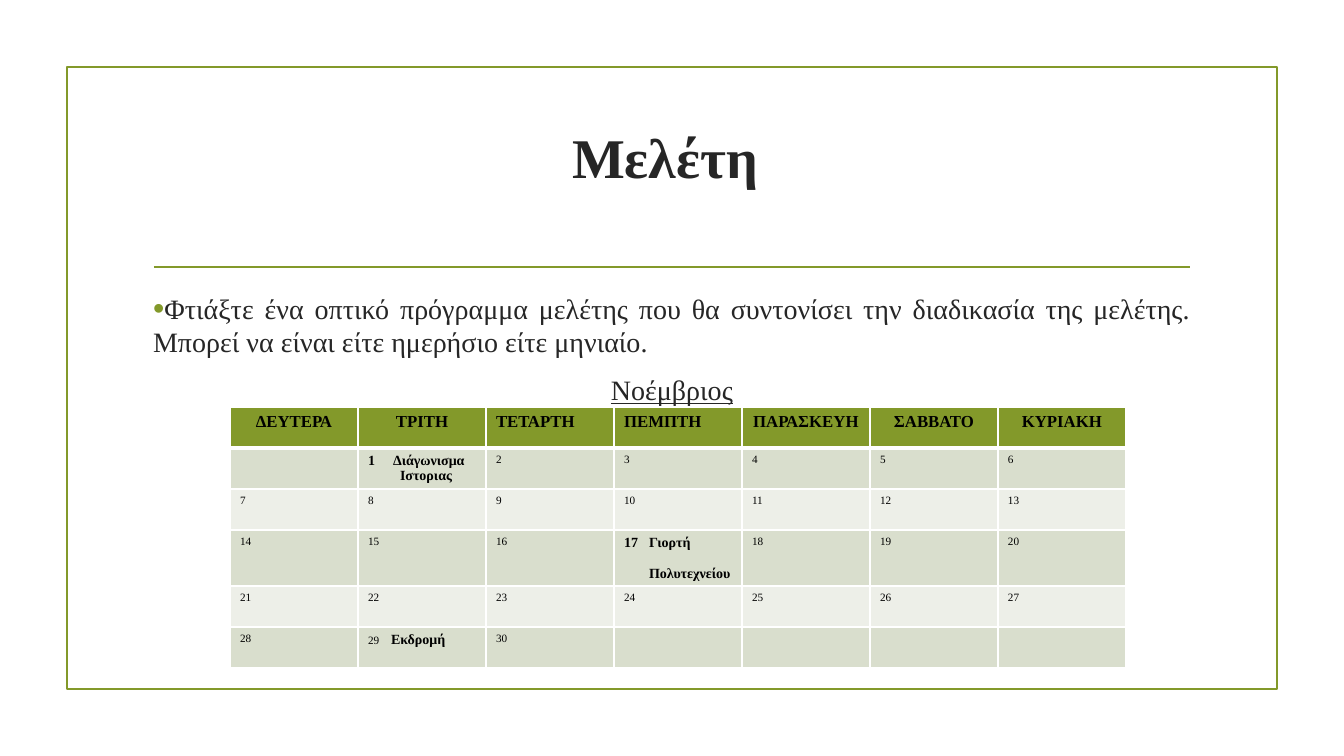
from lxml.etree import SubElement
from pptx import Presentation
from pptx.dml.color import RGBColor
from pptx.enum.shapes import MSO_CONNECTOR, MSO_SHAPE
from pptx.enum.text import MSO_ANCHOR, MSO_AUTO_SIZE, PP_ALIGN
from pptx.oxml.ns import qn
from pptx.util import Pt

EMU_PER_PX = 914400 / 100.8
FONT = "Times New Roman"
OLIVE = RGBColor(0x83, 0x99, 0x2A)
SAGE = RGBColor(0xD9, 0xDE, 0xCD)
MIST = RGBColor(0xED, 0xEF, 0xE8)
WHITE = RGBColor(0xFF, 0xFF, 0xFF)
CHARCOAL = RGBColor(0x26, 0x26, 0x26)
BLACK = RGBColor(0x00, 0x00, 0x00)

WEEKDAYS = ["ΔΕΥΤΕΡΑ", "ΤΡΙΤΗ", "ΤΕΤΑΡΤΗ", "ΠΕΜΠΤΗ", "ΠΑΡΑΣΚΕΥΗ", "ΣΑΒΒΑΤΟ", "ΚΥΡΙΑΚΗ"]
LEFT_ALIGNED_DAYS = {"ΤΕΤΑΡΤΗ", "ΠΕΜΠΤΗ"}
ROW_HEIGHTS = [41, 41, 41, 56, 41, 41]
LAST_DAY = 30
NUMBERED_EVENTS = {
    1: ("Διάγωνισμα", "Ιστοριας", 32, 0),
    17: ("Γιορτή", "Πολυτεχνείου", 25, 11),
}
TABBED_EVENTS = {29: "Εκδρομή"}


def px(length):
    return round(length * EMU_PER_PX)


class StudySlide:
    """Holds the style and the current slide, and adds each kind of element."""

    def __init__(self, presentation):
        self.slide = presentation.slides.add_slide(presentation.slide_layouts[1])

    def add_run(self, paragraph, text, size, color=CHARCOAL, bold=False, underline=False):
        run = paragraph.add_run()
        run.text = text
        font = run.font
        font.name, font.size, font.bold = FONT, Pt(size), bold
        font.underline = underline
        font.color.rgb = color

    def set_indent(self, paragraph, left, first=0):
        properties = paragraph._p.get_or_add_pPr()
        properties.set("marL", str(px(left)))
        properties.set("indent", str(px(first)))
        return properties

    def add_frame(self, left, top, width, height):
        shape = self.slide.shapes.add_shape(
            MSO_SHAPE.RECTANGLE, px(left), px(top), px(width), px(height))
        shape.shadow.inherit = False
        shape.fill.background()
        shape.line.color.rgb = OLIVE
        shape.line.width = Pt(1.25)

    def add_rule(self, left, right, y):
        connector = self.slide.shapes.add_connector(
            MSO_CONNECTOR.STRAIGHT, px(left), px(y), px(right), px(y))
        connector.line.color.rgb = OLIVE
        connector.line.width = Pt(1.25)
        SubElement(connector._element.spPr, qn("a:effectLst"))

    def place(self, placeholder, left, top, width, height, anchor):
        placeholder.left, placeholder.top = px(left), px(top)
        placeholder.width, placeholder.height = px(width), px(height)
        frame = placeholder.text_frame
        frame.word_wrap = True
        frame.auto_size = MSO_AUTO_SIZE.NONE
        frame.vertical_anchor = anchor
        return frame

    def add_title(self, text, *box):
        frame = self.place(self.slide.shapes.title, *box, MSO_ANCHOR.MIDDLE)
        paragraph = frame.paragraphs[0]
        paragraph.alignment = PP_ALIGN.CENTER
        self.add_run(paragraph, text, 40, bold=True)

    def add_body(self, advice, month, *box):
        frame = self.place(self.slide.placeholders[1], *box, MSO_ANCHOR.TOP)
        bullet_paragraph, month_paragraph = frame.paragraphs[0], frame.add_paragraph()
        for paragraph in (bullet_paragraph, month_paragraph):
            self.set_indent(paragraph, 0)
            paragraph.line_spacing = 1.0
            paragraph.space_after = Pt(6)
        bullet_paragraph.space_before = Pt(0)
        month_paragraph.space_before = Pt(4)
        properties = bullet_paragraph._p.pPr
        bullet_color = SubElement(properties, qn("a:buClr"))
        SubElement(bullet_color, qn("a:srgbClr"), val=str(OLIVE))
        SubElement(properties, qn("a:buSzPct"), val="115000")
        SubElement(properties, qn("a:buChar"), char="•")
        SubElement(month_paragraph._p.pPr, qn("a:buNone"))
        bullet_paragraph.alignment = PP_ALIGN.JUSTIFY
        month_paragraph.alignment = PP_ALIGN.CENTER
        self.add_run(bullet_paragraph, advice, 20)
        self.add_run(month_paragraph, month, 20, underline=True)

    def style_cell(self, cell, fill, top, bottom):
        properties = cell._tc.get_or_add_tcPr()
        for side, width in (("lnL", 1), ("lnR", 1), ("lnT", top), ("lnB", bottom)):
            border = SubElement(properties, qn(f"a:{side}"), w=str(Pt(width)))
            border_fill = SubElement(border, qn("a:solidFill"))
            SubElement(border_fill, qn("a:srgbClr"), val=str(WHITE))
        cell.fill.solid()
        cell.fill.fore_color.rgb = fill

    def add_numbered_event(self, frame, day, first, second, indent, gap):
        paragraph = frame.paragraphs[0]
        properties = self.set_indent(paragraph, 25, -25)
        SubElement(properties, qn("a:buFont"), typeface=FONT)
        SubElement(properties, qn("a:buAutoNum"), type="arabicPlain", startAt=str(day))
        self.add_run(paragraph, first, 10, BLACK, bold=True)
        paragraph = frame.add_paragraph()
        self.set_indent(paragraph, indent)
        paragraph.space_before = Pt(gap)
        self.add_run(paragraph, second, 10, BLACK, bold=True)

    def add_tabbed_event(self, paragraph, day, event):
        tabs = SubElement(paragraph._p.get_or_add_pPr(), qn("a:tabLst"))
        SubElement(tabs, qn("a:tab"), pos=str(px(23)), algn="l")
        self.add_run(paragraph, f"{day}\t", 8, BLACK)
        self.add_run(paragraph, event, 10, BLACK, bold=True)

    def fill_day(self, cell, day):
        cell.margin_right = px(4)
        cell.margin_bottom = px(3)
        frame = cell.text_frame
        paragraph = frame.paragraphs[0]
        if day in NUMBERED_EVENTS:
            self.add_numbered_event(frame, day, *NUMBERED_EVENTS[day])
        elif day in TABBED_EVENTS:
            self.add_tabbed_event(paragraph, day, TABBED_EVENTS[day])
        elif 1 <= day <= LAST_DAY:
            self.add_run(paragraph, str(day), 8, BLACK)
        else:
            paragraph.font.size = Pt(8)

    def add_calendar(self, left, top, column_width):
        columns = len(WEEKDAYS)
        table = self.slide.shapes.add_table(
            len(ROW_HEIGHTS), columns, px(left), px(top),
            px(columns * column_width), px(sum(ROW_HEIGHTS))).table
        for column in table.columns:
            column.width = px(column_width)
        for row, height in zip(table.rows, ROW_HEIGHTS):
            row.height = px(height)
        for index, weekday in enumerate(WEEKDAYS):
            header = table.cell(0, index)
            self.style_cell(header, OLIVE, 1, 3)
            paragraph = header.text_frame.paragraphs[0]
            centred = weekday not in LEFT_ALIGNED_DAYS
            paragraph.alignment = PP_ALIGN.CENTER if centred else PP_ALIGN.LEFT
            self.add_run(paragraph, weekday, 12, BLACK, bold=True)
            for week in range(1, len(ROW_HEIGHTS)):
                cell = table.cell(week, index)
                self.style_cell(cell, SAGE if week % 2 else MIST, 3 if week == 1 else 1, 1)
                self.fill_day(cell, columns * (week - 1) + index)


def main():
    presentation = Presentation()
    presentation.slide_width, presentation.slide_height = px(1344), px(756)
    study = StudySlide(presentation)
    study.add_frame(67, 67, 1210, 622)
    study.add_rule(154, 1190, 267)
    study.add_title("Μελέτη ", 143, 89, 1058, 135)
    study.add_body(
        "Φτιάξτε ένα οπτικό πρόγραμμα μελέτης που θα συντονίσει την διαδικασία "
        "της μελέτης. Μπορεί να είναι είτε ημερήσιο είτε μηνιαίο.",
        "Νοέμβριος", 143, 286, 1058, 366)
    study.add_calendar(230, 407, 128)
    presentation.save("out.pptx")


if __name__ == "__main__":
    main()
